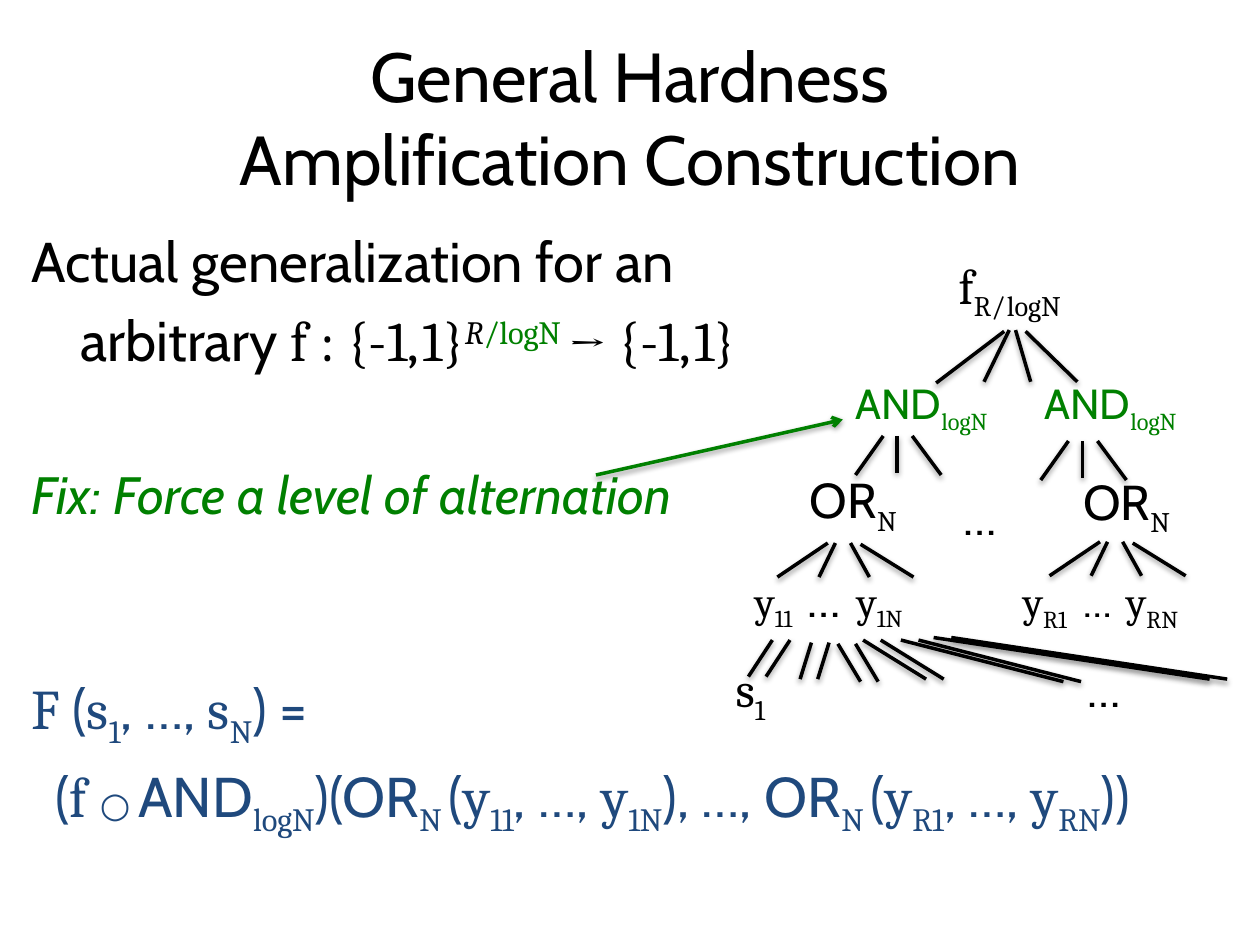
import pptx
import pptx.dml.color
import pptx.enum.shapes
import pptx.enum.text
import pptx.oxml
import pptx.oxml.ns
import pptx.util
from pptx.util import Inches

COLORS = {"black": "000000", "green": "008000", "navy": "1F497D"}
SANS = {"name": "Cabin"}
SERIF = {"name": "Cambria"}
SUB = {"name": "Cambria", "baseline": -25}
SUPER = {"name": "Cambria", "baseline": 30}
THIN = {"name": "Cambria", "size": 10}
SHADOW = (
    '<a:effectLst %s><a:outerShdw blurRad="40000" dist="20000" dir="5400000" rotWithShape="0">'
    '<a:srgbClr val="000000"><a:alpha val="38000"/></a:srgbClr>'
    '</a:outerShdw></a:effectLst>' % pptx.oxml.ns.nsdecls("a")
)


def rgb(color):
    return pptx.dml.color.RGBColor.from_string(COLORS[color])


class SlideStyle:
    def __init__(self, page):
        self.page = page

    def add_spans(self, para, runs, size, color="black"):
        """Add (text, format) runs; a format overrides the paragraph's size and color."""
        for text, overrides in runs:
            span = para.add_run()
            span.text = text
            look = {"size": size, "color": color, **overrides}
            span.font.color.rgb = rgb(look.pop("color"))
            look["size"] = pptx.util.Pt(look["size"])
            baseline = look.pop("baseline", 0)
            for key, value in look.items():
                setattr(span.font, key, value)
            if baseline:
                span.font._element.set("baseline", str(baseline * 1000))

    def title(self, lines, left, top, width, height):
        box = self.page.shapes.title
        place = {"left": left, "top": top, "width": width, "height": height}
        for key, value in place.items():
            setattr(box, key, Inches(value))
        frame = box.text_frame
        frame.auto_size = pptx.enum.text.MSO_AUTO_SIZE.NONE
        frame.vertical_anchor = pptx.enum.text.MSO_ANCHOR.MIDDLE
        para = frame.paragraphs[0]
        para.alignment = pptx.enum.text.PP_ALIGN.CENTER
        for number, line in enumerate(lines):
            if number:
                para.add_line_break()
            self.add_spans(para, [(line, SANS)], 39.6)

    def text_frame(self, left, top, width, height):
        box = self.page.shapes.add_textbox(*map(Inches, (left, top, width, height)))
        box.text_frame.word_wrap = True
        return box.text_frame

    def body(self, paragraphs, left, top, width, height):
        frame = self.text_frame(left, top, width, height)
        for number, (before, margin, size, color, runs) in enumerate(paragraphs):
            para = frame.add_paragraph() if number else frame.paragraphs[0]
            para.space_before = pptx.util.Pt(before)
            properties = para._p.get_or_add_pPr()
            properties.set("marL", str(Inches(margin)))
            self.add_spans(para, runs, size, color)

    def label(self, runs, left, top, width, height=0.57, size=28, color="black", tabs=()):
        para = self.text_frame(left, top, width, height).paragraphs[0]
        if tabs:
            stops = "".join('<a:tab pos="%d" algn="l"/>' % Inches(tab) for tab in tabs)
            para._p.get_or_add_pPr().append(pptx.oxml.parse_xml(
                "<a:tabLst %s>%s</a:tabLst>" % (pptx.oxml.ns.nsdecls("a"), stops)))
        self.add_spans(para, runs, size, color)

    def line(self, x1, y1, x2, y2, color="black", arrow=False):
        line = self.page.shapes.add_connector(
            pptx.enum.shapes.MSO_CONNECTOR.STRAIGHT, *map(Inches, (x1, y1, x2, y2)))
        line.line.color.rgb = rgb(color)
        line.line.width = pptx.util.Pt(2)
        if arrow:
            line.line._get_or_add_ln().append(pptx.oxml.parse_xml(
                '<a:tailEnd type="arrow" %s/>' % pptx.oxml.ns.nsdecls("a")))
        line._element.spPr.append(pptx.oxml.parse_xml(SHADOW))

    def fan(self, branches, dx=0, dy=0):
        for x1, y1, x2, y2 in branches:
            self.line(x1 + dx, y1 + dy, x2 + dx, y2 + dy)


def arguments(letter, first, last):
    return [("(", SANS), (letter, SERIF), (first, SUB), (", …, ", SANS),
            (letter, SERIF), (last, SUB)]


def main():
    deck = pptx.Presentation()
    deck.slide_width, deck.slide_height = Inches(10), Inches(7.5)
    slide = SlideStyle(deck.slides.add_slide(deck.slide_layouts[5]))

    slide.title(["General Hardness", "Amplification Construction"], 0.5, 0.3, 9, 1.25)

    # Statement, fix and formula: space before, left margin, size, color, runs
    slide.body([
        (0, 0, 32, "black", [("Actual generalization for an", SANS)]),
        (6.4, 0.39, 32, "black", [
            ("arbitrary ", SANS), ("f : {-1,", SERIF), (" ", THIN), ("1}", SERIF),
            ("R", {**SUPER, "italic": True}), ("/logN ", {**SUPER, "color": "green"}),
            ("→", {**SERIF, "size": 28}), (" {-1,", SERIF), (" ", THIN), ("1}", SERIF)]),
        (51, 0, 30, "green", [("Fix: Force a level of alternation", {**SANS, "italic": True})]),
        (85, 0, 32, "navy", [("F ", SERIF), *arguments("s", "1", "N"), (") =", SANS)]),
        (6.4, 0.19, 32, "navy", [
            ("(", SANS), ("f ", SERIF), ("○ ", {**SANS, "size": 20}), ("AND", SANS),
            ("logN", SUB), (")(OR", SANS), ("N ", SUB), *arguments("y", "11", "1N"),
            ("), …, OR", SANS), ("N ", SUB), *arguments("y", "R1", "RN"), ("))", SANS)]),
    ], 0.15, 1.75, 10.02, 5.27)

    # Tree labels, from the root down
    slide.label([("f", SERIF), ("R/", SUB), (" ", {**SUB, "size": 8}), ("logN", SUB)],
                7.51, 1.98, 1.44)
    for left in (6.69, 8.19):
        slide.label([("AND", SANS), ("logN", SUB)], left, 2.95, 1.76, 0.5, 24, "green")
    for left, top in ((6.33, 3.68), (8.5, 3.69)):
        slide.label([("OR", SANS), ("N", SUB)], left, top, 1.22)
    for left, top, width, height, first, last, dots, tabs in (
            (5.89, 4.46, 1.85, 0.89, "11", "1N", 28, (0.42, 0.81)),
            (8.02, 4.52, 2.63, 0.77, "R1", "RN", 24, (0.48, 0.82))):
        slide.label([("y", SERIF), (first, SUB), ("\t…\t", {**SANS, "size": dots}),
                     ("y", SERIF), (last, SUB)], left, top, width, height, 24, tabs=tabs)
    slide.label([("s", SERIF), ("1", SUB)], 5.74, 5.18, 0.68)
    for left, top in ((7.55, 3.81), (8.53, 5.18)):
        slide.label([("…", SANS)], left, top, 0.68)

    # Branches between the levels
    slide.fan([(7.97, 2.63, 7.43, 3.04), (8.01, 2.62, 7.81, 3.03),
               (8.06, 2.62, 8.18, 3.03), (8.14, 2.63, 8.55, 3.03)])
    for dx, dy in ((0, 0), (1.47, 0.04)):
        slide.fan([(7.01, 3.46, 6.79, 3.77), (7.12, 3.46, 7.12, 3.75),
                   (7.24, 3.46, 7.47, 3.77)], dx, dy)
    for dx, dy in ((0, 0), (2.16, -0.01)):
        slide.fan([(6.57, 4.31, 6.17, 4.58), (6.63, 4.31, 6.5, 4.58),
                   (6.75, 4.31, 6.9, 4.58), (7.25, 4.58, 6.83, 4.32)], dx, dy)
    for dx in (0, 0.14):
        slide.fan([(6.13, 5.08, 5.94, 5.37), (6.44, 5.1, 6.35, 5.39),
                   (6.65, 5.11, 6.83, 5.41), (6.85, 5.08, 7.35, 5.39),
                   (7.15, 5.08, 8.44, 5.41), (7.41, 5.06, 9.6, 5.39)], dx)

    # Pointer from the fix to the added level
    slide.line(4.73, 3.77, 6.69, 3.33, "green", arrow=True)

    deck.save("out.pptx")


if __name__ == "__main__":
    main()
